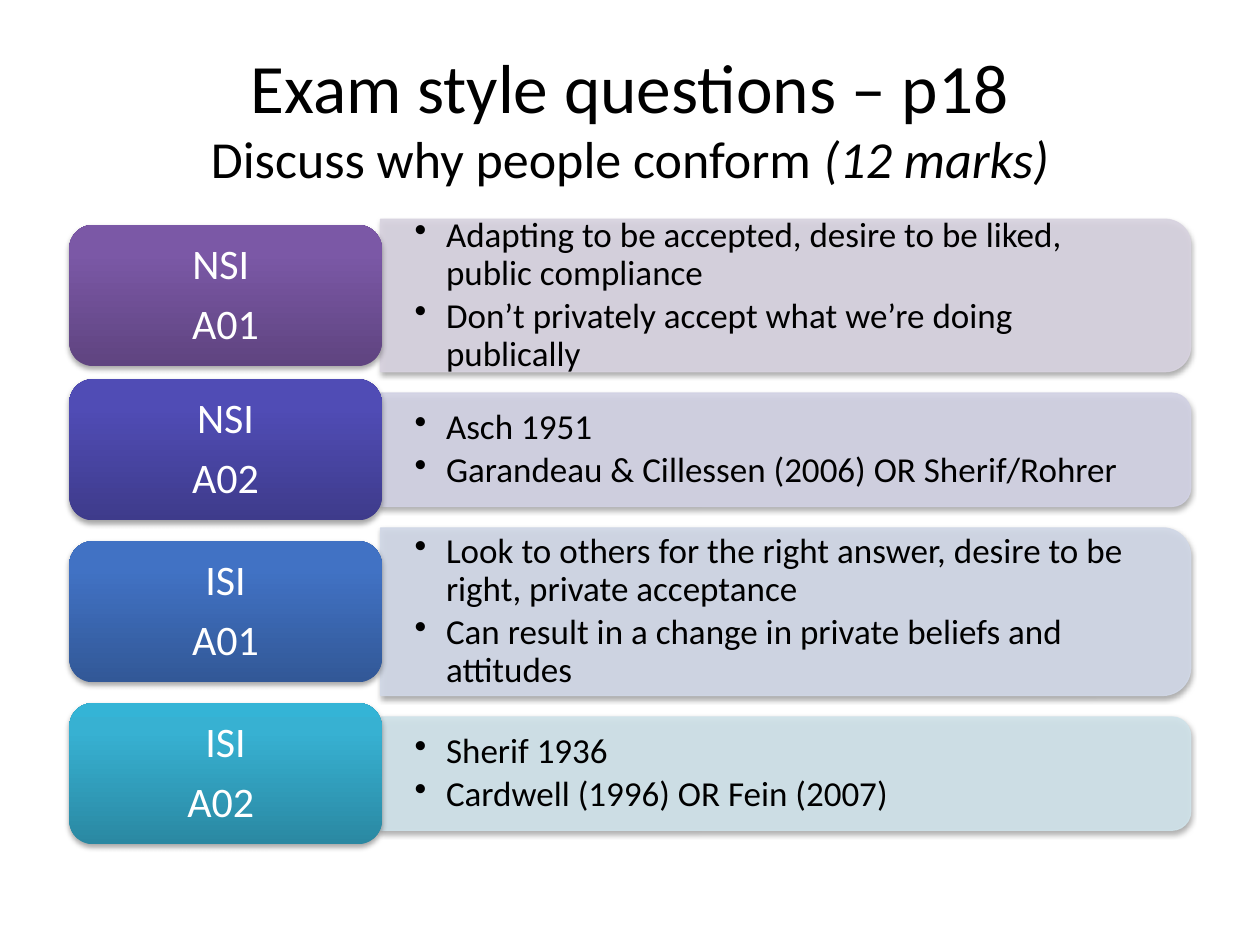
"""Build a slide of four exam answer rows, each a label beside a bullet panel."""
from dataclasses import dataclass

from lxml import etree
from pptx import Presentation
from pptx.dml.color import RGBColor
from pptx.enum.shapes import MSO_SHAPE
from pptx.enum.text import MSO_ANCHOR, PP_ALIGN
from pptx.oxml import parse_xml
from pptx.oxml.ns import nsdecls, qn
from pptx.util import Inches, Pt

ROUND, TAB = MSO_SHAPE.ROUNDED_RECTANGLE, MSO_SHAPE.ROUND_2_SAME_RECTANGLE
MID, CENTER = MSO_ANCHOR.MIDDLE, PP_ALIGN.CENTER

TITLE = [
    ("Exam style questions – p18", "head", False),
    None,
    ("Discuss why people conform ", "sub", False),
    ("(12 marks)", "sub", True),
]
ROWS = [
    (["NSI ", "A01"],
     ["Adapting to be accepted, desire to be liked, public compliance",
      "Don’t privately accept what we’re doing publically"],
     1.21, "D8D3E0", ["5F4480", "7B58A6", "7C57A8"]),
    (["NSI", "A02"],
     ["Asch 1951", "Garandeau & Cillessen (2006) OR Sherif/Rohrer"],
     0.9, "D2D2E4", ["3E3B8B", "504CB5", "4F4BB8"]),
    (["ISI", "A01"],
     ["Look to others for the right answer, desire to be right, private acceptance",
      "Can result in a change in private beliefs and attitudes"],
     1.33, "D1D8E7", ["325897", "4172C4", "3F72C7"]),
    (["ISI", "A02 "],
     ["Sherif 1936", "Cardwell (1996) OR Fein (2007)"],
     0.9, "D0E3EA", ["2A88A2", "37B1D2", "34B4D6"]),
]


@dataclass(frozen=True)
class Theme:
    """Colours, font and type sizes."""
    font: str = "Calibri"
    dark: str = "000000"
    light: str = "FFFFFF"
    head: float = 39.6
    sub: float = 29.7
    label: float = 24
    item: float = 20


LOOK = Theme()
WIDE, HIGH = 10, 7.5
EDGE, TOP, GAP = 0.55, 1.74, 0.06
LABEL_W, LABEL_H = 2.48, 1.12
PANEL_X, PANEL_W = 3.02, 6.43


def put(obj, form):
    """Set each attribute named in form."""
    for key, val in form.items():
        setattr(obj, key, val)


def style(font, size, tint, slant=False):
    """Set size, colour and slant of a font."""
    put(font, {"name": LOOK.font, "size": Pt(size), "italic": slant})
    font.color.rgb = RGBColor.from_string(tint)


def shade(shape):
    """Give a shape a soft shadow below."""
    shape.shadow.inherit = False
    glow = shape._element.spPr.find(qn("a:effectLst"))
    glow.append(parse_xml(
        f'<a:outerShdw {nsdecls("a")} blurRad="40000" dist="23000" dir="5400000" '
        'rotWithShape="0"><a:srgbClr val="000000"><a:alpha val="35000"/>'
        '</a:srgbClr></a:outerShdw>'))


def blend(shape, tints):
    """Fill a shape with a gradient from bottom to top."""
    stops = "".join(f'<a:gs pos="{pos}"><a:srgbClr val="{tint}"/></a:gs>'
                    for pos, tint in zip((0, 80000, 100000), tints))
    shape.fill.background()
    props = shape._element.spPr
    props.replace(props.find(qn("a:noFill")), parse_xml(
        f'<a:gradFill {nsdecls("a")} rotWithShape="1"><a:gsLst>{stops}</a:gsLst>'
        '<a:lin ang="16200000" scaled="0"/></a:gradFill>'))


def write(frame, lines, size, tint, form, dot=False):
    """Write lines as paragraphs, with bullets if dot is set."""
    put(frame, {"word_wrap": True, "vertical_anchor": MID})
    for num, line in enumerate(lines):
        para = frame.add_paragraph() if num else frame.paragraphs[0]
        put(para, {"text": line, "line_spacing": 0.9, **form})
        if dot:
            props = para._p.get_or_add_pPr()
            put(props, {"lvl": 1})
            props.set("marL", str(Inches(0.25)))
            props.set("indent", str(Inches(-0.25)))
            etree.SubElement(props, qn("a:buChar")).set("char", "•")
        style(para.font, size, tint)
        style(para.runs[0].font, size, tint)


def add_title(slide):
    """Place and fill the title."""
    title = slide.shapes.title
    put(title, {"left": Inches(0.05 * WIDE), "top": Inches(0.04 * HIGH),
                "width": Inches(0.9 * WIDE), "height": Inches(1.25)})
    title.text_frame.vertical_anchor = MID
    para = title.text_frame.paragraphs[0]
    para.alignment = CENTER
    for part in TITLE:
        if part is None:
            para.add_line_break()
            continue
        text, size, slant = part
        run = para.add_run()
        run.text = text
        style(run.font, getattr(LOOK, size), LOOK.dark, slant)


def add_panel(slide, items, mid, high, tint):
    """Draw a turned tab with its bullet text on top."""
    left = PANEL_X + (PANEL_W - high) / 2
    tab = slide.shapes.add_shape(TAB, Inches(left), Inches(mid - PANEL_W / 2),
                                 Inches(high), Inches(PANEL_W))
    tab.rotation = 90
    tab.line.width = Pt(0.75)
    for fill in (tab.fill, tab.line.fill):
        fill.solid()
        fill.fore_color.rgb = RGBColor.from_string(tint)
    for clr in tab._element.spPr.iter(qn("a:srgbClr")):
        etree.SubElement(clr, qn("a:alpha")).set("val", "90000")
    shade(tab)
    tall = high * 0.9
    box = slide.shapes.add_textbox(Inches(PANEL_X), Inches(mid - tall / 2),
                                   Inches(PANEL_W - 0.06), Inches(tall))
    put(box.text_frame, {"margin_left": Inches(0.27), "margin_right": Inches(0.27),
                         "margin_top": Inches(0.14), "margin_bottom": Inches(0.14)})
    write(box.text_frame, items, LOOK.item, LOOK.dark, {"space_after": Pt(3)}, True)


def add_label(slide, lines, mid, tints):
    """Draw a label block."""
    block = slide.shapes.add_shape(ROUND, Inches(EDGE), Inches(mid - LABEL_H / 2),
                                   Inches(LABEL_W), Inches(LABEL_H))
    blend(block, tints)
    block.line.fill.background()
    shade(block)
    write(block.text_frame, lines, LOOK.label, LOOK.light,
          {"alignment": CENTER, "space_after": Pt(8.4)})


def main():
    """Build and save the slide."""
    deck = Presentation()
    put(deck, {"slide_width": Inches(WIDE), "slide_height": Inches(HIGH)})
    slide = deck.slides.add_slide(deck.slide_layouts[5])
    add_title(slide)
    top = TOP
    for lines, items, high, tint, tints in ROWS:
        row = max(high, LABEL_H)
        mid = top + row / 2
        add_panel(slide, items, mid, high, tint)
        add_label(slide, lines, mid, tints)
        top += row + GAP
    deck.save("out.pptx")


if __name__ == "__main__":
    main()
